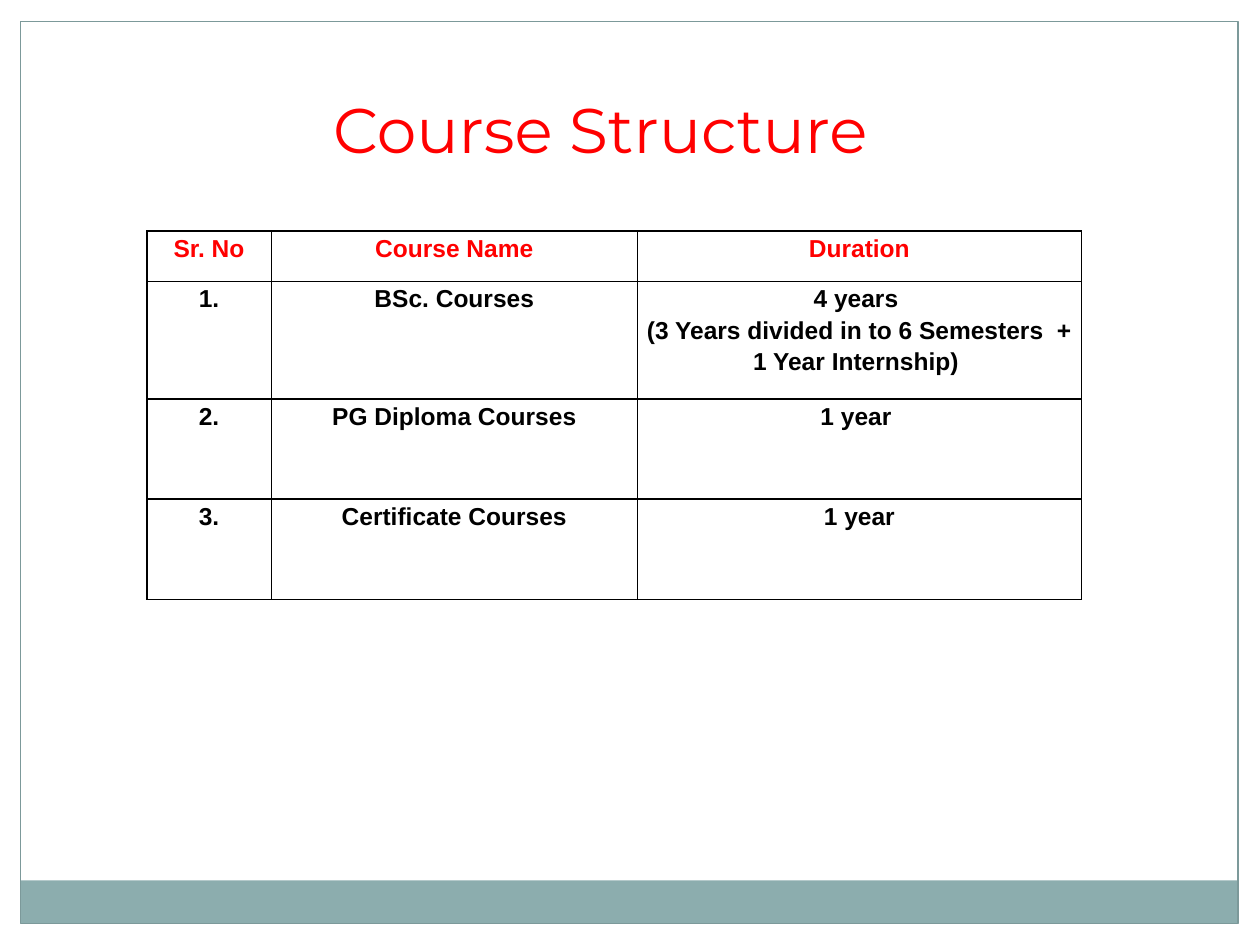
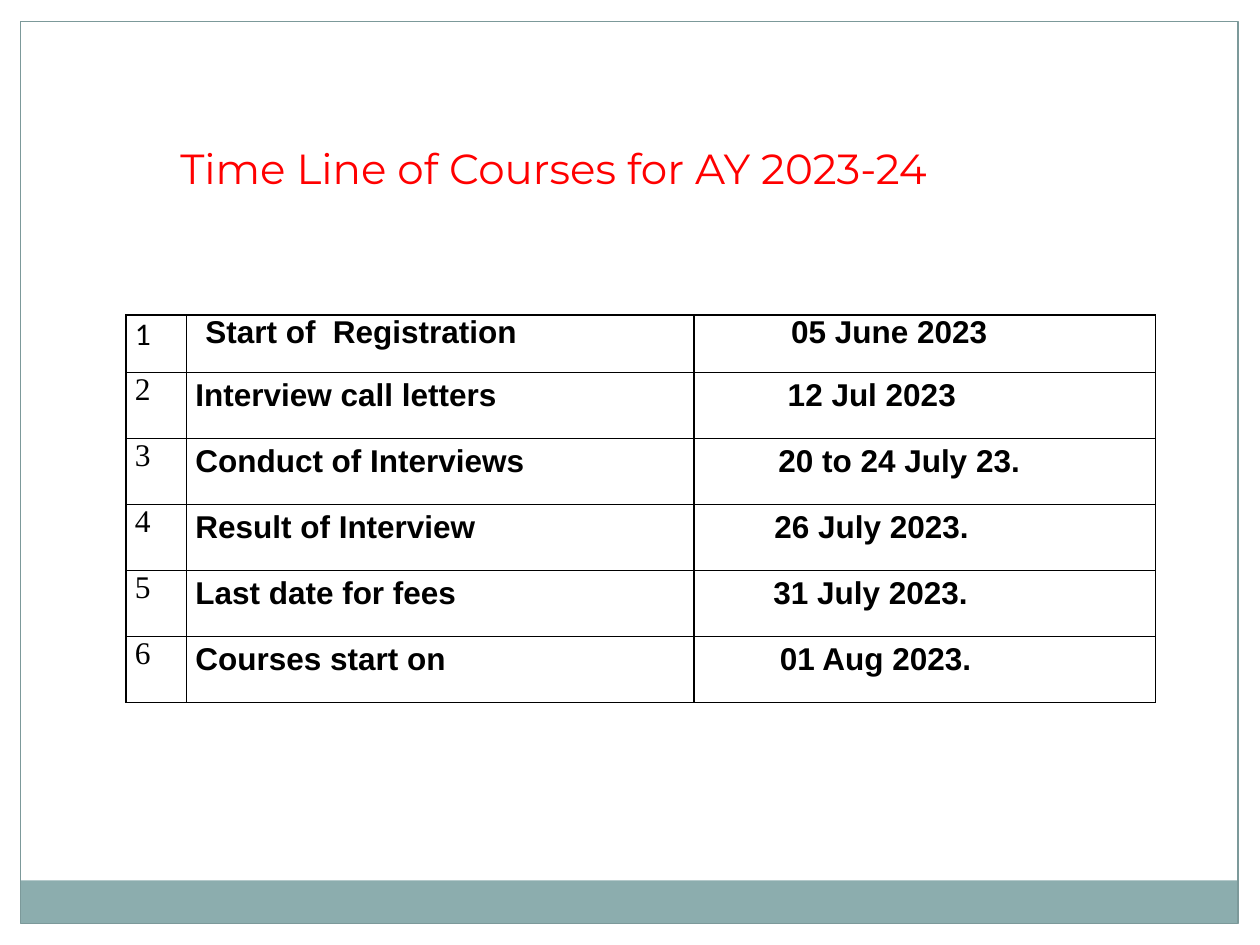
"""Build two slides on course structure and dates."""
from dataclasses import dataclass
from typing import NamedTuple

from lxml.etree import SubElement
from pptx import Presentation
from pptx.dml.color import RGBColor
from pptx.enum.shapes import MSO_SHAPE
from pptx.enum.text import MSO_ANCHOR, MSO_AUTO_SIZE, PP_ALIGN
from pptx.oxml.ns import qn
from pptx.presentation import Presentation as Deck
from pptx.slide import Slide
from pptx.table import _Cell as Cell
from pptx.util import Cm, Pt

HUES = {"red": "FF0000", "black": "000000", "white": "FFFFFF",
        "band": "8CADAE", "frame": "7C999A"}
WIDTH, HEIGHT, EDGE = 25.4, 19.05, 0.42


class Box(NamedTuple):
    left: float
    top: float
    width: float
    height: float


@dataclass
class Panel:
    box: Box
    fill: str = ""
    line: str = ""


@dataclass
class Style:
    font: str
    size: int
    hue: str = "black"
    bold: bool = False
    align: PP_ALIGN = PP_ALIGN.LEFT
    lead: float = 1.0
    indent: float = 0


@dataclass
class Entry:
    lines: list[str]
    style: Style


@dataclass
class Grid:
    left: float
    top: float
    cols: list[float]
    rows: list[float]
    cells: list[list[Entry]]


PANELS = [
    Panel(Box(0, 0, WIDTH, EDGE), fill="white"),
    Panel(Box(WIDTH - EDGE, 0, EDGE, HEIGHT), fill="white"),
    Panel(Box(0, 0, EDGE, HEIGHT), fill="white"),
    Panel(Box(0.42, 17.75, 24.54, 0.86), fill="band"),
    Panel(Box(0.42, 0.43, 24.54, 18.19), line="frame"),
]


def color(hue: str) -> RGBColor:
    """Look up a colour by name."""
    return RGBColor.from_string(HUES[hue])


def write(frame, lines: list[str], style: Style) -> None:
    """Fill a text frame with one paragraph per line."""
    for i, line in enumerate(lines):
        para = frame.add_paragraph() if i else frame.paragraphs[0]
        para.alignment = style.align
        para.line_spacing = style.lead
        if style.indent:
            props = para._p.get_or_add_pPr()
            props.set("marL", str(Cm(style.indent)))
            props.set("indent", "0")
        run = para.add_run()
        run.text = line
        font = run.font
        font.name, font.size, font.bold = style.font, Pt(style.size), style.bold
        font.color.rgb = color(style.hue)


def place(slide: Slide, panel: Panel) -> None:
    """Draw a plain rectangle."""
    shape = slide.shapes.add_shape(MSO_SHAPE.RECTANGLE, *map(Cm, panel.box))
    shape.shadow.inherit = False
    if panel.fill:
        shape.fill.solid()
        shape.fill.fore_color.rgb = color(panel.fill)
    else:
        shape.fill.background()
    if panel.line:
        shape.line.color.rgb = color(panel.line)
        shape.line.width = Pt(0.75)
    else:
        shape.line.fill.background()


def start(deck: Deck, words: str, box: Box, size: int, align: PP_ALIGN) -> Slide:
    """Add a slide with its panels and title."""
    slide = deck.slides.add_slide(deck.slide_layouts[5])
    for panel in PANELS:
        place(slide, panel)
    title = slide.shapes.title
    title.left, title.top, title.width, title.height = map(Cm, box)
    frame = title.text_frame
    frame.word_wrap = True
    frame.auto_size = MSO_AUTO_SIZE.NONE
    frame.vertical_anchor = MSO_ANCHOR.TOP
    write(frame, [words], Style("Montserrat", size, "red", align=align))
    return slide


def border(cell: Cell) -> None:
    """Rule all four sides of a cell."""
    props = cell._tc.get_or_add_tcPr()
    for side in ("lnL", "lnR", "lnT", "lnB"):
        line = SubElement(props, qn(f"a:{side}"), w=str(Pt(1)))
        fill = SubElement(line, qn("a:solidFill"))
        SubElement(fill, qn("a:srgbClr"), val=HUES["black"])


def draw(slide: Slide, grid: Grid) -> None:
    """Draw a ruled table."""
    box = Box(grid.left, grid.top, sum(grid.cols), sum(grid.rows))
    table = slide.shapes.add_table(
        len(grid.rows), len(grid.cols), *map(Cm, box)).table
    table.first_row = table.horz_banding = False
    for col, width in zip(table.columns, grid.cols):
        col.width = Cm(width)
    for row, height, entries in zip(table.rows, grid.rows, grid.cells):
        row.height = Cm(height)
        for cell, entry in zip(row.cells, entries):
            border(cell)
            cell.fill.background()
            cell.margin_left = cell.margin_right = Cm(0.18)
            cell.margin_top = cell.margin_bottom = 0
            write(cell.text_frame, entry.lines, entry.style)


def courses(deck: Deck) -> None:
    """Build the course structure slide."""
    slide = start(deck, "Course Structure ", Box(3.38, 1.7, 17.78, 1.8),
                  36, PP_ALIGN.CENTER)
    head = ["Sr. No", "Course Name", "Duration"]
    plan = [
        ("BSc. Courses",
         ["4 years ", "(3 Years divided in to 6 Semesters  + 1 Year Internship) "]),
        ("PG Diploma Courses", ["1 year "]),
        ("Certificate Courses", ["1 year"]),
    ]
    top, body = (Style("Arial", 14, hue, True, PP_ALIGN.CENTER, 1.15)
                 for hue in ("red", "black"))
    cells = [[Entry([word], top) for word in head]]
    for num, (name, span) in enumerate(plan, 1):
        cells.append([Entry(part, body) for part in ([f"{num}."], [name], span)])
    draw(slide, Grid(2.96, 4.66, [2.51, 7.38, 8.95],
                     [1.01, 2.37, 2.02, 2.03], cells))


def dates(deck: Deck) -> None:
    """Build the time line slide."""
    slide = start(deck, "Time Line of Courses for AY 2023-24",
                  Box(3.38, 2.74, 17.58, 1.27), 24, PP_ALIGN.LEFT)
    steps = [
        ("Start of  Registration", "05 June 2023", 1.78),
        ("Interview call letters", "12 Jul 2023", 1.71),
        ("Conduct of Interviews", "20 to 24 July 23.", 1.52),
        ("Result of Interview", "26 July 2023.", 1.44),
        ("Last date for fees", "31 July 2023.", 1.42),
        ("Courses start on", "01 Aug 2023.", 1.55),
    ]
    cells = []
    for num, (name, date, indent) in enumerate(steps, 1):
        first = num == 1
        lead = 1.0 if first else 1.15
        cells.append([
            Entry([str(num)], Style("Calibri" if first else "Times New Roman", 18)),
            Entry([name], Style("Arial", 18, bold=True, lead=lead,
                                indent=0.2 if first else 0)),
            Entry([date], Style("Arial", 18, bold=True, lead=lead, indent=indent)),
        ])
    draw(slide, Grid(2.54, 6.35, [1.22, 10.23, 9.3],
                     [1.16] + [1.33] * 5, cells))


def main() -> None:
    """Build and save the deck."""
    deck = Presentation()
    deck.slide_width, deck.slide_height = Cm(WIDTH), Cm(HEIGHT)
    courses(deck)
    dates(deck)
    deck.save("out.pptx")


if __name__ == "__main__":
    main()
